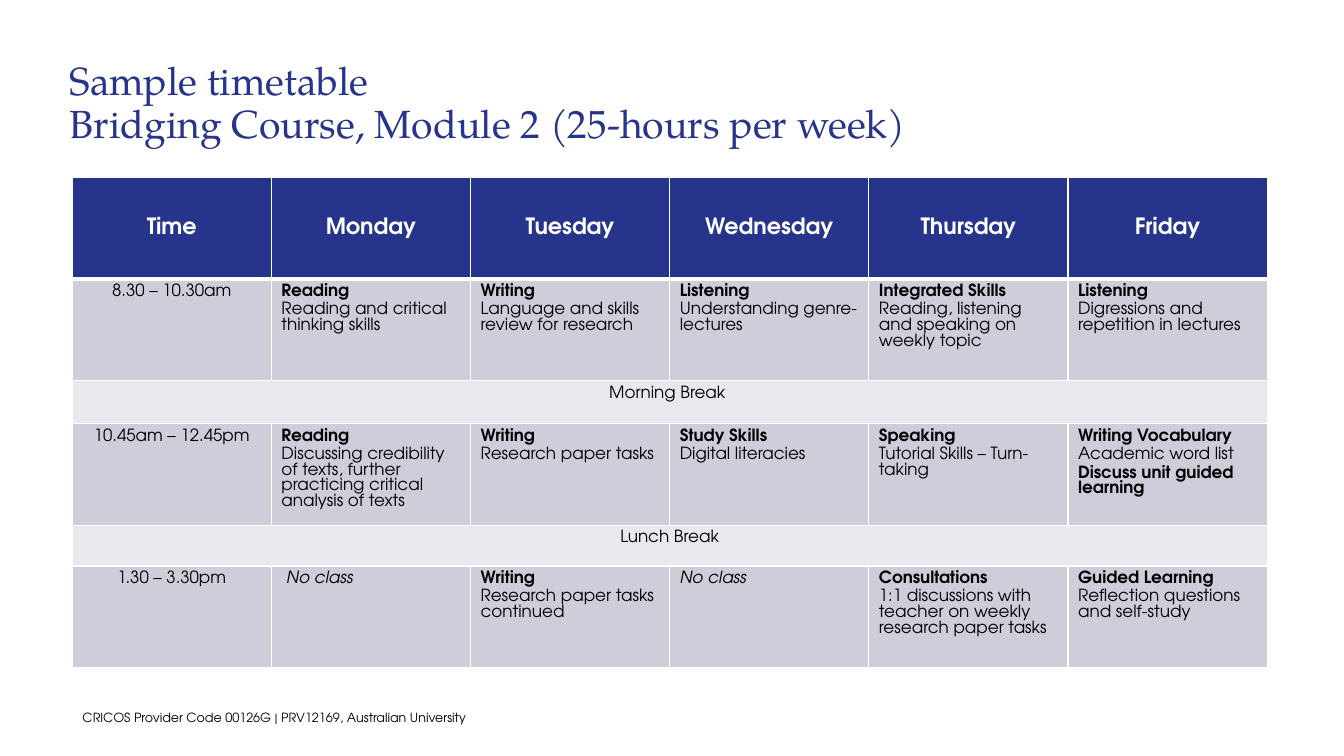
"""Build the sample timetable slide for the bridging course."""
from lxml import etree
from pptx import Presentation
from pptx.dml.color import RGBColor
from pptx.enum.text import MSO_ANCHOR, PP_ALIGN
from pptx.oxml.ns import qn
from pptx.util import Cm, Pt

LEFT, CENTER = PP_ALIGN.LEFT, PP_ALIGN.CENTER
TOP, MIDDLE = MSO_ANCHOR.TOP, MSO_ANCHOR.MIDDLE

TITLE = ["Sample timetable", "Bridging Course, Module 2 (25-hours per week)"]
FOOTER = "CRICOS Provider Code 00126G | PRV12169, Australian University"
DAYS = ["Time", "Monday", "Tuesday", "Wednesday", "Thursday", "Friday"]
NO_CLASS = [("No class", "italic")]


def lesson(subject, topic):
    """Return a bold subject followed by its plain topic."""
    return [(subject, "bold"), (topic, "plain")]


SESSIONS = [
    ("8.30 – 10.30am", [
        lesson("Reading", "Reading and critical thinking skills"),
        lesson("Writing", "Language and skills review for research"),
        lesson("Listening", "Understanding genre-lectures"),
        lesson("Integrated Skills", "Reading, listening and speaking on weekly topic"),
        lesson("Listening", "Digressions and repetition in lectures"),
    ]),
    ("Morning Break ", []),
    ("10.45am – 12.45pm", [
        lesson("Reading", "Discussing credibility of texts, further practicing "
               "critical analysis of texts"),
        lesson("Writing", "Research paper tasks"),
        lesson("Study Skills", "Digital literacies"),
        lesson("Speaking", "Tutorial Skills – Turn-taking"),
        lesson("Writing Vocabulary", "Academic word list")
        + [("Discuss unit guided learning", "bold")],
    ]),
    ("Lunch Break", []),
    ("1.30 – 3.30pm", [
        NO_CLASS,
        lesson("Writing", "Research paper tasks continued"),
        NO_CLASS,
        lesson("Consultations", "1:1 discussions with teacher on weekly research paper tasks"),
        lesson("Guided Learning", "Reflection questions and self-study"),
    ]),
]

NAVY, WHITE, BLACK = "27348B", "FFFFFF", "000000"
LESSON_FILL, BREAK_FILL = "CDCEDA", "E8E8EE"
SERIF, SANS = "TeX Gyre Pagella", "TeX Gyre Adventor"
BODY = {"name": SANS, "size": Pt(12), "bold": False, "italic": False}
FORMATS = {
    "title": {"name": SERIF, "size": Pt(28)},
    "footer": {"name": SANS, "size": Pt(9)},
    "header": {**BODY, "size": Pt(16), "bold": True},
    "plain": BODY,
    "bold": {**BODY, "bold": True},
    "italic": {**BODY, "italic": True},
}
TABLE_LEFT, TABLE_TOP, COLUMN_WIDTH = 1.82, 4.47, 5.02
ROW_HEIGHTS = [2.56, 2.56, 1.09, 2.56, 1.02, 2.56]
INDENTS = {(5, 1): 0.38}
TIGHT_LINES = {(3, 1): 11.1}


def color(value):
    """Turn a hex string into a colour."""
    return RGBColor.from_string(value)


def set_font(font, style, ink):
    """Apply a named format and a colour to a font."""
    for key, value in FORMATS[style].items():
        setattr(font, key, value)
    font.color.rgb = color(ink)


def add_box(slide, lines, place, insets, style, ink, spacing):
    """Add a text box whose lines share one paragraph."""
    box = slide.shapes.add_textbox(*(Cm(value) for value in place))
    frame = box.text_frame
    frame.word_wrap = True
    sides = ("margin_left", "margin_top", "margin_right", "margin_bottom")
    for side, inset in zip(sides, insets):
        setattr(frame, side, Cm(inset))
    para = frame.paragraphs[0]
    para.line_spacing = spacing
    for number, line in enumerate(lines):
        if number:
            para.add_line_break()
        span = para.add_run()
        span.text = line
        set_font(span.font, style, ink)
    return box


def set_borders(cell, widths):
    """Draw white lines on the left, right, top and bottom of a cell."""
    properties = cell._tc.get_or_add_tcPr()
    for side, width in zip("LRTB", widths):
        line = etree.SubElement(properties, qn(f"a:ln{side}"), w=str(Pt(width)))
        fill = etree.SubElement(line, qn("a:solidFill"))
        etree.SubElement(fill, qn("a:srgbClr"), val=WHITE)


def fill_cell(cell, texts, fill, ink, align, anchor):
    """Write styled paragraphs into a cell and colour it."""
    cell.fill.solid()
    cell.fill.fore_color.rgb = color(fill)
    cell.vertical_anchor = anchor
    for number, (text, style) in enumerate(texts):
        paras = cell.text_frame.paragraphs
        para = cell.text_frame.add_paragraph() if number else paras[0]
        para.alignment = align
        para.space_before = Pt(1 if number else 0)
        para.space_after = Pt(1)
        span = para.add_run()
        span.text = text
        set_font(span.font, style, ink)


def add_timetable(slide):
    """Add the week grid with its header, lessons and breaks."""
    rows, columns = len(ROW_HEIGHTS), len(DAYS)
    table = slide.shapes.add_table(
        rows, columns, Cm(TABLE_LEFT), Cm(TABLE_TOP),
        Cm(COLUMN_WIDTH * columns), Cm(sum(ROW_HEIGHTS))).table
    table.horz_banding = False
    for column in table.columns:
        column.width = Cm(COLUMN_WIDTH)
    for index, height in enumerate(ROW_HEIGHTS):
        table.rows[index].height = Cm(height)
        for column in range(columns):
            widths = (1, 1, 3 if index == 1 else 1, 3 if index == 0 else 1)
            set_borders(table.cell(index, column), widths)
    for column, day in enumerate(DAYS):
        fill_cell(table.cell(0, column), [(day, "header")], NAVY, WHITE, CENTER, MIDDLE)
    for index, (label, lessons) in enumerate(SESSIONS, 1):
        first = table.cell(index, 0)
        if not lessons:
            first.merge(table.cell(index, columns - 1))
        fill = LESSON_FILL if lessons else BREAK_FILL
        fill_cell(first, [(label, "plain")], fill, BLACK, CENTER, TOP)
        for column, texts in enumerate(lessons, 1):
            fill_cell(table.cell(index, column), texts, fill, BLACK, LEFT, TOP)
    for position, indent in INDENTS.items():
        table.cell(*position).margin_left = Cm(indent)
    for position, pitch in TIGHT_LINES.items():
        for para in table.cell(*position).text_frame.paragraphs:
            para.line_spacing = Pt(pitch)


def main():
    """Create the deck and save it."""
    deck = Presentation()
    deck.slide_width, deck.slide_height = Cm(33.87), Cm(19.05)
    page = deck.slides.add_slide(deck.slide_layouts[6])
    title = add_box(page, TITLE, (0.97, 0.95, 24.18, 2.77), (0.79, 0.61, 0.71, 0.71),
                    "title", NAVY, 0.9)
    title.fill.solid()
    title.fill.fore_color.rgb = color(WHITE)
    add_timetable(page)
    add_box(page, [FOOTER], (1.83, 17.77, 16.94, 0.64), (0.25, 0.13, 0.25, 0.13),
            "footer", BLACK, 1.0)
    deck.save("out.pptx")


if __name__ == "__main__":
    main()
